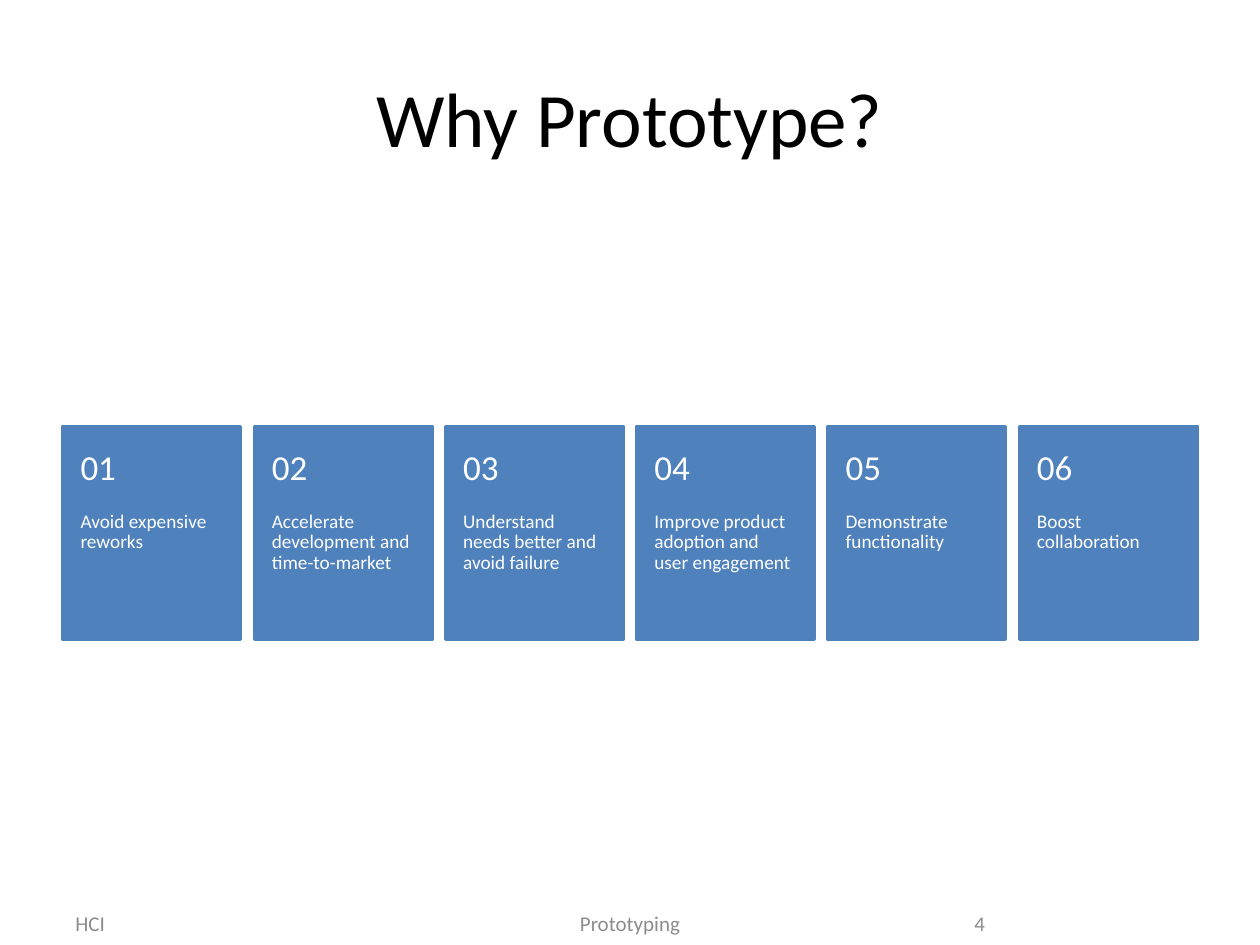
from pptx import Presentation
from pptx.dml.color import RGBColor
from pptx.enum import shapes, text
from pptx.util import Pt

TITLE = "Why Prototype?"
CARDS = [
    "Avoid expensive reworks",
    "Accelerate development and time-to-market",
    "Understand needs better and avoid failure",
    "Improve product adoption and user engagement",
    "Demonstrate functionality",
    "Boost collaboration",
]
LEFT, MID, RIGHT = text.PP_ALIGN.LEFT, text.PP_ALIGN.CENTER, text.PP_ALIGN.RIGHT
FOOT = [
    ("HCI", 36, 168, LEFT),
    ("Prototyping", 246, 228, MID),
    ("4", 516, 54, RIGHT),
]
FONT = "Calibri"
BLACK = RGBColor(0, 0, 0)
WHITE = RGBColor(255, 255, 255)
GRAY = RGBColor(0x8C, 0x8C, 0x8C)
BLUE = RGBColor(0x4F, 0x81, 0xBD)
EDGE, SPAN, WIDE = 36, 648, 101.5
TOP, HIGH, HEAD = 243.6, 121.8, 48.7
INSET = (7.2, 3.6, 7.2, 3.6)


def place(shape, x, y, w, h):
    shape.left, shape.top, shape.width, shape.height = map(Pt, (x, y, w, h))


def write(shape, words, size, color, align, anchor, inset=INSET):
    frame = shape.text_frame
    frame.text = words
    frame.word_wrap = True
    frame.auto_size = text.MSO_AUTO_SIZE.NONE
    frame.vertical_anchor = anchor
    (frame.margin_left, frame.margin_top,
     frame.margin_right, frame.margin_bottom) = map(Pt, inset)
    para = frame.paragraphs[0]
    para.alignment = align
    font = para.runs[0].font
    font.name, font.size = FONT, Pt(size)
    font.color.rgb = color
    return para


def label(slide, box, *style):
    return write(slide.shapes.add_textbox(*map(Pt, box)), *style)


def card(slide, x, num, words):
    rect = slide.shapes.add_shape(
        shapes.MSO_SHAPE.RECTANGLE, Pt(x), Pt(TOP), Pt(WIDE), Pt(HIGH))
    rect.shadow.inherit = False
    rect.fill.solid()
    rect.fill.fore_color.rgb = BLUE
    rect.line.color.rgb = BLUE
    rect.line.width = Pt(2)
    body = label(slide, (x, TOP + HEAD, WIDE, HIGH - HEAD), words, 11, WHITE,
                 LEFT, text.MSO_ANCHOR.TOP, (10, 0, 10, 26))
    head = label(slide, (x, TOP, WIDE, HEAD), f"{num:02}", 20, WHITE,
                 LEFT, text.MSO_ANCHOR.MIDDLE, (10, 13, 10, 13))
    for para in (body, head):
        para.line_spacing = 0.9


def main():
    deck = Presentation()
    deck.slide_width, deck.slide_height = Pt(720), Pt(540)
    slide = deck.slides.add_slide(deck.slide_layouts[5])
    title = slide.shapes.title
    place(title, EDGE, 21.6, SPAN, 90)
    write(title, TITLE, 44, BLACK, MID, text.MSO_ANCHOR.MIDDLE)
    for words, x, wide, align in FOOT:
        label(slide, (x, 516.2, wide, 22.3), words, 12, GRAY, align,
              text.MSO_ANCHOR.MIDDLE).space_after = Pt(6)
    step = (SPAN - WIDE) / (len(CARDS) - 1)
    for i, words in enumerate(CARDS):
        card(slide, EDGE + i * step, i + 1, words)
    deck.save("out.pptx")


if __name__ == "__main__":
    main()
